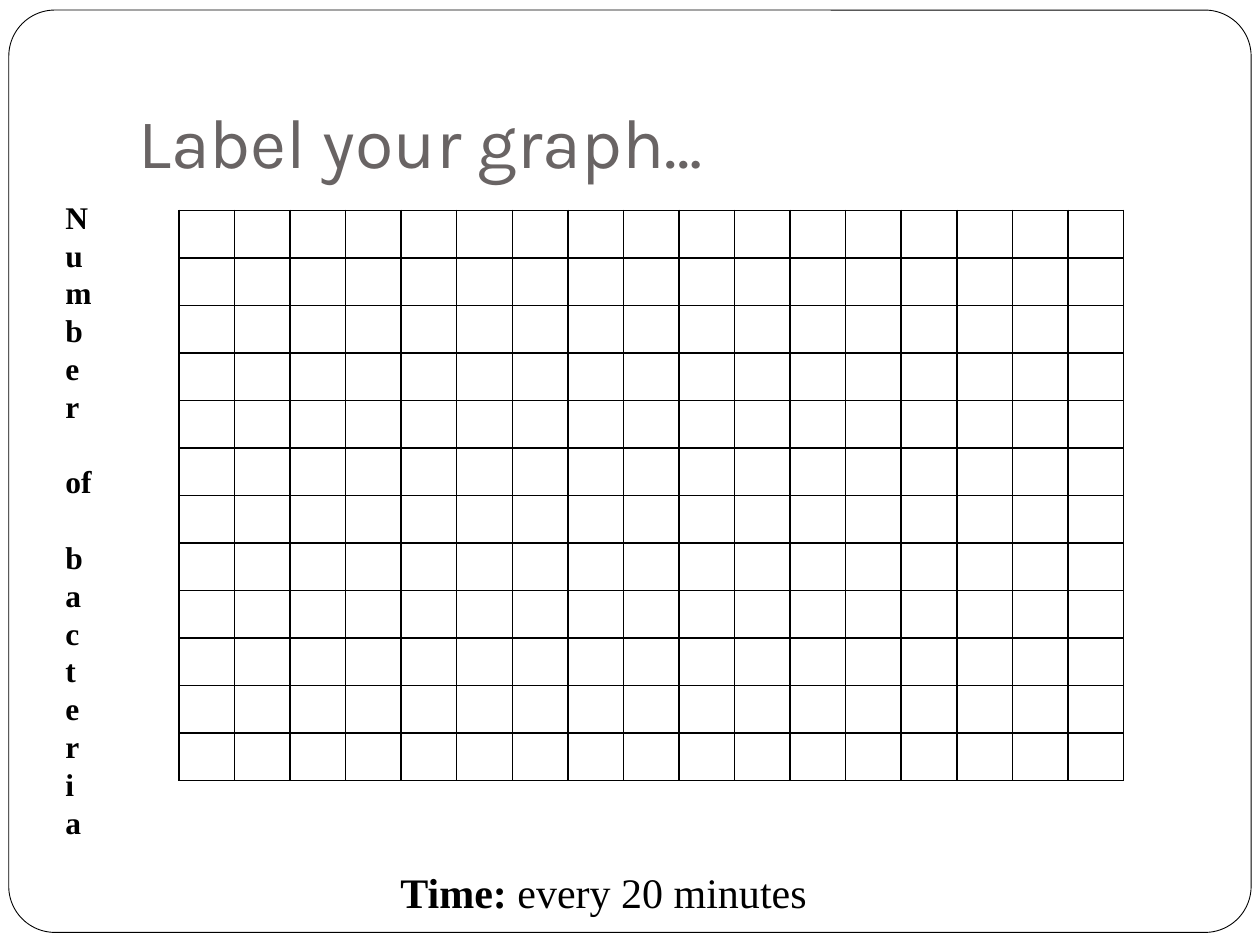
"""Build a slide with a blank graph grid and its axis labels."""
import pptx
import pptx.util
import pptx.dml.color
import pptx.enum.shapes
import pptx.enum.text
import pptx.oxml

Inches, Pt = pptx.util.Inches, pptx.util.Pt
RGB = pptx.dml.color.RGBColor.from_string
HUES = {"ink": "000000", "paper": "FFFFFF", "title": "696464"}
NS = "http://schemas.openxmlformats.org/drawingml/2006/main"
COLS, ROWS = 17, 12
PITCH = Pt(21.6)


def add_box(place, wrap, **attrs):
    box = slide.shapes.add_textbox(*map(Inches, place))
    frame = box.text_frame
    frame.word_wrap = wrap
    for key, val in attrs.items():
        setattr(frame, key, val)
    return frame


def add_run(para, text, hue, **attrs):
    run = para.add_run()
    run.text = text
    run.font.color.rgb = RGB(HUES[hue])
    for key, val in attrs.items():
        setattr(run.font, key, val)


deck = pptx.Presentation()
deck.slide_width, deck.slide_height = Inches(10), Inches(7.5)
slide = deck.slides.add_slide(deck.slide_layouts[6])

frame = slide.shapes.add_shape(
    pptx.enum.shapes.MSO_SHAPE.ROUNDED_RECTANGLE,
    Inches(0.07), Inches(0.08), Inches(9.86), Inches(7.32))
frame.adjustments[0] = 0.05
frame.shadow.inherit = False
frame.fill.solid()
frame.fill.fore_color.rgb = RGB(HUES["paper"])
frame.line.color.rgb = RGB(HUES["ink"])
frame.line.width = Pt(0.5)

title = add_box((1, 0.3, 8.5, 1.25), True, margin_bottom=Inches(0.1),
                vertical_anchor=pptx.enum.text.MSO_ANCHOR.BOTTOM)
add_run(title.paragraphs[0], "Label your graph…", "title", name="Karla", size=Pt(40))

grid = slide.shapes.add_table(
    ROWS, COLS, Inches(1.42), Inches(1.67), Inches(7.5), Inches(4.53)).table
grid.first_row = grid.horz_banding = False
for col in grid.columns:
    col.width = Inches(7.5 / COLS)
for row in grid.rows:
    row.height = Inches(4.53 / ROWS)
for cell in grid.iter_cells():
    cell.margin_top = cell.margin_bottom = 0
    cell.fill.background()
    props = cell._tc.get_or_add_tcPr()
    for spot, side in enumerate("LRTB"):
        props.insert(spot, pptx.oxml.parse_xml(
            f'<a:ln{side} xmlns:a="{NS}" w="{Pt(1)}"><a:solidFill>'
            f'<a:srgbClr val="{HUES["ink"]}"/></a:solidFill></a:ln{side}>'))

serif = {"name": "Times New Roman", "size": Pt(24)}
time = add_box((3.08, 6.83, 3.75, 0.5), False).paragraphs[0]
add_run(time, "Time: ", "ink", bold=True, **serif)
add_run(time, "every 20 minutes", "ink", bold=False, **serif)

serif["size"] = Pt(18)
count = add_box((0.42, 1.52, 0.5, 5.55), True)
for word in ("Numb", "e", "r"), ("of",), tuple("bacteria"):
    for place, part in enumerate(word):
        first = part == "Numb"
        para = count.paragraphs[0] if first else count.add_paragraph()
        para.line_spacing = PITCH
        para.space_before = PITCH if place == 0 and not first else 0
        add_run(para, part, "ink", bold=True, **serif)

deck.save("out.pptx")
